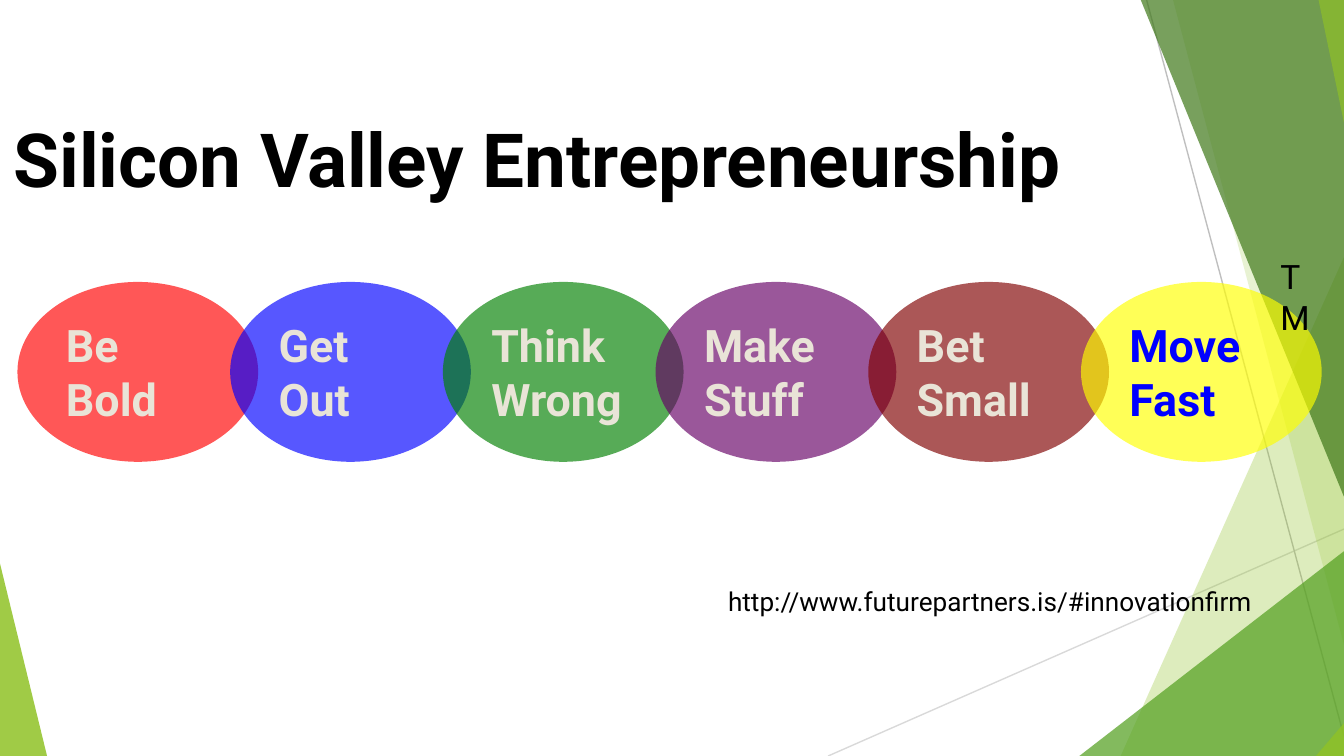
from lxml.etree import SubElement
from pptx import Presentation
from pptx.dml.color import RGBColor
from pptx.enum.shapes import MSO_CONNECTOR, MSO_SHAPE
from pptx.enum.text import MSO_ANCHOR, PP_ALIGN
from pptx.oxml.ns import qn
from pptx.util import Cm, Pt

# Content
TITLE = "Silicon Valley Entrepreneurship"
LINK = "http://www.futurepartners.is/#innovationfirm"
STEPS = [
    (["Be", "Bold"], "red", "cream"),
    (["Get", "Out"], "blue", "cream"),
    (["Think", "Wrong"], "green", "cream"),
    (["Make", "Stuff"], "purple", "cream"),
    (["Bet", "Small"], "maroon", "cream"),
    (["Move", "Fast"], "yellow", "blue"),
]

COLORS = {
    "black": "000000", "cream": "E9E4D7",
    "red": "FF0000", "blue": "0000FF", "green": "008000",
    "purple": "660066", "maroon": "800000", "yellow": "FFFF00",
    "lime": "90C226", "leaf": "54A021", "forest": "3F7819",
    "light gray": "D9D9D9", "gray": "BFBFBF",
}
FONT = "Roboto"
WIDTH, HEIGHT = 25.4, 14.29

# Background facets: corner points in cm, colour, opacity in percent
LEFT_FACET = ([(0, 10.65), (0.89, HEIGHT), (0, HEIGHT)], "lime", 85)
RIGHT_FACETS = [
    ([(WIDTH, 4.86), (21.18, HEIGHT), (WIDTH, HEIGHT)], "lime", 30),
    ([(22.17, 0), (WIDTH, 12.19), (WIDTH, 0)], "lime", 20),
    ([(20.4, HEIGHT), (WIDTH, 10.42), (WIDTH, HEIGHT)], "leaf", 72),
    ([(21.56, 0), (WIDTH, 9.39), (WIDTH, 0)], "forest", 70),
    ([(24.92, 0), (WIDTH, 2.32), (WIDTH, 0)], "lime", 65),
    ([(24.87, HEIGHT), (WIDTH, 13.67), (WIDTH, HEIGHT)], "lime", 80),
]
RAYS = [
    ((15.65, HEIGHT), (WIDTH, 10), "light gray"),
    ((21.67, 0), (WIDTH, 13.92), "gray"),
]

# Chain of ellipses, in cm
CHAIN_LEFT, CHAIN_TOP, CHAIN_STEP = 0.33, 5.33, 4.02
ELLIPSE_WIDTH, ELLIPSE_HEIGHT = 4.55, 3.4


def rgb(name):
    return RGBColor.from_string(COLORS[name])


def paint(shape, color, opacity):
    shape.shadow.inherit = False
    shape.line.fill.background()
    shape.fill.solid()
    shape.fill.fore_color.rgb = rgb(color)
    color_element = shape.fill._xPr.find(qn("a:solidFill"))[0]
    SubElement(color_element, qn("a:alpha"), val=str(opacity * 1000))


def write(shape, lines, size=18, color="black", bold=False, anchor=MSO_ANCHOR.TOP):
    frame = shape.text_frame
    frame.word_wrap = True
    frame.vertical_anchor = anchor
    frame.text = "\n".join(lines)
    for paragraph in frame.paragraphs:
        paragraph.alignment = PP_ALIGN.LEFT
        font = paragraph.runs[0].font
        font.name, font.size, font.bold = FONT, Pt(size), bold
        font.color.rgb = rgb(color)


def add_facet(slide, points, color, opacity):
    corners = [(Cm(x), Cm(y)) for x, y in points]
    builder = slide.shapes.build_freeform(*corners[0])
    builder.add_line_segments(corners[1:], close=True)
    paint(builder.convert_to_shape(), color, opacity)


def add_ray(slide, start, end, color):
    ray = slide.shapes.add_connector(
        MSO_CONNECTOR.STRAIGHT, *(Cm(value) for value in start + end))
    ray.line.color.rgb = rgb(color)
    ray.line.width = Pt(0.75)
    SubElement(ray._element.spPr, qn("a:effectLst"))


def add_label(slide, text, box, **text_format):
    label = slide.shapes.add_textbox(*(Cm(value) for value in box))
    write(label, [text], **text_format)


def main():
    presentation = Presentation()
    presentation.slide_width, presentation.slide_height = Cm(WIDTH), Cm(HEIGHT)
    slide = presentation.slides.add_slide(presentation.slide_layouts[5])

    # Background
    add_facet(slide, *LEFT_FACET)
    for ray in RAYS:
        add_ray(slide, *ray)
    for facet in RIGHT_FACETS:
        add_facet(slide, *facet)

    # Title and link
    title = slide.shapes.title
    title.left, title.top = Cm(0), Cm(2)
    title.width, title.height = Cm(21.4), Cm(1.96)
    write(title, [TITLE], size=40, bold=True)
    add_label(slide, LINK, (13.51, 10.95, 10.97, 0.86), size=14)

    # Chain of overlapping steps
    for index, (lines, fill, color) in enumerate(STEPS):
        ellipse = slide.shapes.add_shape(
            MSO_SHAPE.OVAL, Cm(CHAIN_LEFT + index * CHAIN_STEP), Cm(CHAIN_TOP),
            Cm(ELLIPSE_WIDTH), Cm(ELLIPSE_HEIGHT))
        paint(ellipse, fill, 66)
        write(ellipse, lines, size=24, color=color, bold=True,
              anchor=MSO_ANCHOR.MIDDLE)

    # Trademark
    add_label(slide, "TM", (23.95, 4.72, 1.35, 1.02))

    presentation.save("out.pptx")


if __name__ == "__main__":
    main()
